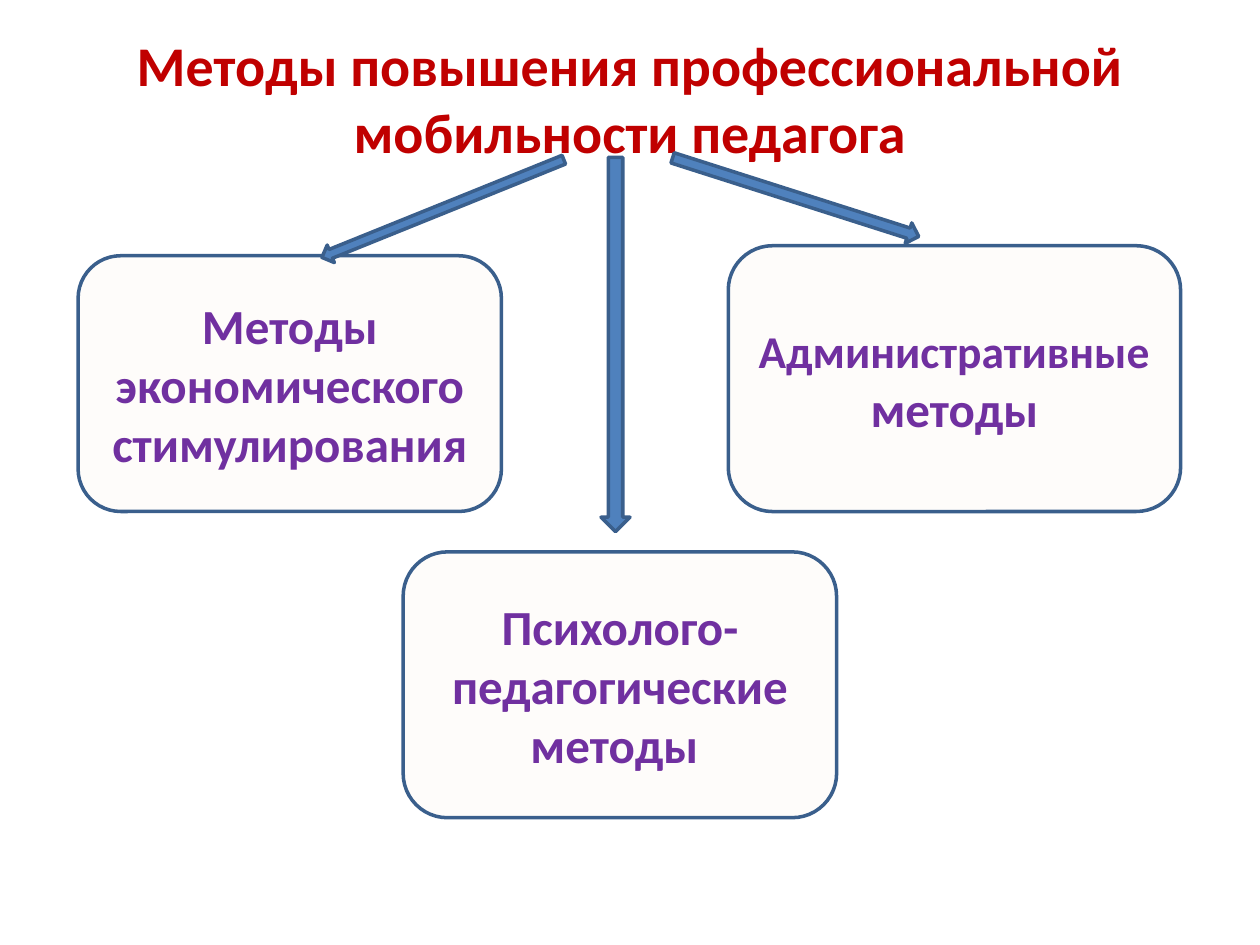
from dataclasses import dataclass

from lxml.etree import SubElement
from pptx import Presentation
from pptx.dml.color import RGBColor
from pptx.enum.shapes import MSO_SHAPE
from pptx.enum.text import MSO_ANCHOR, MSO_AUTO_SIZE, PP_ALIGN
from pptx.oxml.ns import qn
from pptx.util import Inches, Pt


@dataclass(frozen=True)
class Theme:
    font: str = "Calibri"
    title_color: RGBColor = RGBColor(0xC0, 0x00, 0x00)
    text_color: RGBColor = RGBColor(0x70, 0x30, 0xA0)
    box_fill: RGBColor = RGBColor(0xFD, 0xEA, 0xDA)
    box_opacity: int = 13  # percent
    arrow_fill: RGBColor = RGBColor(0x4F, 0x81, 0xBD)
    line_color: RGBColor = RGBColor(0x3A, 0x5F, 0x8C)
    line_width: int = 2
    title_size: int = 32
    text_size: int = 28
    long_word_size: int = 26


@dataclass(frozen=True)
class Frame:
    left: float
    top: float
    width: float
    height: float

    def lengths(self) -> list:
        return [Inches(n) for n in (self.left, self.top, self.width, self.height)]


@dataclass(frozen=True)
class MethodBox:
    frame: Frame
    runs: tuple  # (text, size) pairs


@dataclass(frozen=True)
class Arrow:
    frame: Frame
    rotation: float


THEME = Theme()
TITLE = "Методы повышения профессиональной мобильности педагога"

METHODS = (
    MethodBox(Frame(0.62, 2.03, 3.36, 2.03),
              (("Методы экономического стимулирования", THEME.text_size),)),
    MethodBox(Frame(3.2, 4.38, 3.44, 2.11),
              (("Психолого-педагогические методы ", THEME.text_size),)),
    MethodBox(Frame(5.78, 1.95, 3.59, 2.11),
              (("Административные", THEME.long_word_size),
               (" методы", THEME.text_size))),
)

ARROWS = (
    Arrow(Frame(2.48, 1.58, 2.07, 0.15), 158),
    Arrow(Frame(3.4, 2.62, 2.97, 0.23), 90),
    Arrow(Frame(5.29, 1.48, 2.05, 0.17), 17.7),
)


def format_paragraph(paragraph, color: RGBColor) -> None:
    paragraph.alignment = PP_ALIGN.CENTER
    paragraph.font.name = THEME.font
    paragraph.font.bold = True
    paragraph.font.color.rgb = color


def add_title(slide, frame: Frame) -> None:
    title = slide.shapes.title
    title.left, title.top, title.width, title.height = frame.lengths()
    text_frame = title.text_frame
    text_frame.text = TITLE
    text_frame.word_wrap = True
    text_frame.auto_size = MSO_AUTO_SIZE.NONE
    text_frame.vertical_anchor = MSO_ANCHOR.MIDDLE
    text_frame.margin_top = Inches(0.13)
    paragraph = text_frame.paragraphs[0]
    format_paragraph(paragraph, THEME.title_color)
    paragraph.font.size = Pt(THEME.title_size)


def add_outlined_shape(slide, kind: MSO_SHAPE, frame: Frame, fill: RGBColor):
    shape = slide.shapes.add_shape(kind, *frame.lengths())
    shape.shadow.inherit = False
    shape.fill.solid()
    shape.fill.fore_color.rgb = fill
    shape.line.color.rgb = THEME.line_color
    shape.line.width = Pt(THEME.line_width)
    return shape


def add_method(slide, method: MethodBox) -> None:
    shape = add_outlined_shape(slide, MSO_SHAPE.ROUNDED_RECTANGLE,
                               method.frame, THEME.box_fill)
    # Fill transparency
    color = shape._element.spPr.find(qn("a:solidFill")).find(qn("a:srgbClr"))
    SubElement(color, qn("a:alpha"), val=str(THEME.box_opacity * 1000))

    text_frame = shape.text_frame
    text_frame.word_wrap = True
    text_frame.vertical_anchor = MSO_ANCHOR.MIDDLE
    paragraph = text_frame.paragraphs[0]
    format_paragraph(paragraph, THEME.text_color)
    for text, size in method.runs:
        run = paragraph.add_run()
        run.text = text
        run.font.size = Pt(size)


def add_arrow(slide, arrow: Arrow) -> None:
    shape = add_outlined_shape(slide, MSO_SHAPE.RIGHT_ARROW,
                               arrow.frame, THEME.arrow_fill)
    shape.rotation = arrow.rotation


def main() -> None:
    presentation = Presentation()
    presentation.slide_width = Inches(10)
    presentation.slide_height = Inches(7.5)
    title_only = presentation.slide_layouts[5]
    slide = presentation.slides.add_slide(title_only)

    add_title(slide, Frame(0.5, 0.3, 9, 0.87))
    # Method boxes, then the arrows that lead to them from the title
    for method in METHODS:
        add_method(slide, method)
    for arrow in ARROWS:
        add_arrow(slide, arrow)

    presentation.save("out.pptx")


if __name__ == "__main__":
    main()
